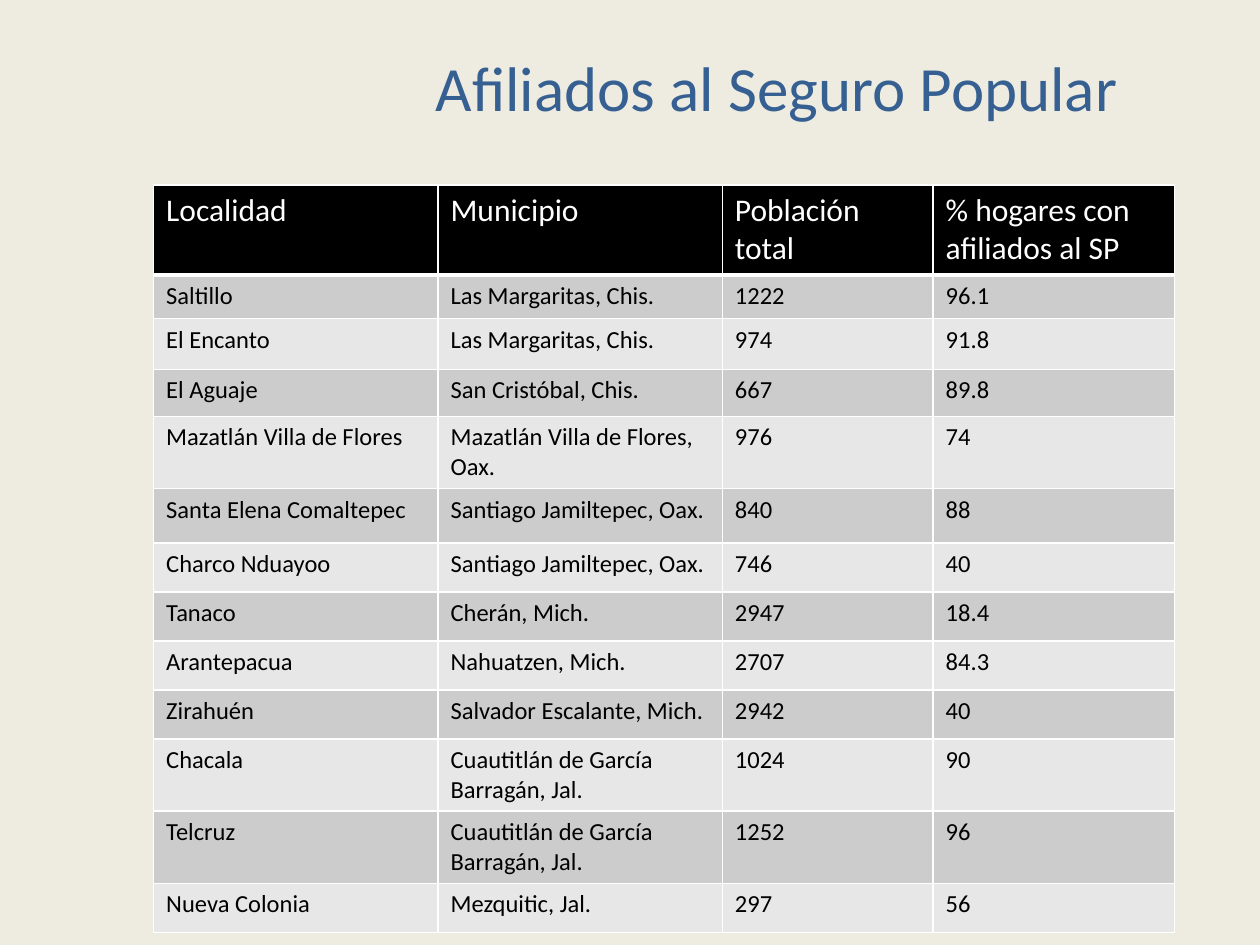
import dataclasses

import lxml.etree
import pptx
import pptx.dml.color
import pptx.enum.text
import pptx.oxml.ns
import pptx.util

Pt = pptx.util.Pt


@dataclasses.dataclass(frozen=True)
class Theme:
    font: str = "Calibri"
    background: str = "EEECE1"
    title: str = "376092"
    header_fill: str = "000000"
    header_text: str = "FFFFFF"
    body_text: str = "000000"
    bands: tuple = ("CCCCCC", "E7E7E7")
    border: str = "FFFFFF"
    title_size: int = 36
    header_size: int = 18
    body_size: int = 14


HEADER = ("Localidad", "Municipio", "Población total", "% hogares con afiliados al SP")
LOCALITIES = (
    ("Saltillo", "Las Margaritas, Chis.", "1222", "96.1"),
    ("El Encanto", "Las Margaritas, Chis.", "974", "91.8"),
    ("El Aguaje", "San Cristóbal, Chis.", "667", "89.8"),
    ("Mazatlán Villa de Flores", "Mazatlán Villa de Flores, Oax.", "976", "74"),
    ("Santa Elena Comaltepec", "Santiago Jamiltepec, Oax.", "840", "88"),
    ("Charco Nduayoo", "Santiago Jamiltepec, Oax.", "746", "40"),
    ("Tanaco", "Cherán, Mich.", "2947", "18.4"),
    ("Arantepacua", "Nahuatzen, Mich.", "2707", "84.3"),
    ("Zirahuén", "Salvador Escalante, Mich.", "2942", "40"),
    ("Chacala", "Cuautitlán de García Barragán, Jal.", "1024", "90"),
    ("Telcruz", "Cuautitlán de García Barragán, Jal.", "1252", "96"),
    ("Nueva Colonia", "Mezquitic, Jal.", "297", "56"),
)
COLUMN_WIDTHS = (162.5, 162.5, 120.5, 137.8)
ROW_HEIGHTS = (51.4, 24.9, 29, 26.8, 41.3, 31.2, 28, 28, 28, 28, 41.3, 41.3, 28)


def rgb(value):
    return pptx.dml.color.RGBColor.from_string(value)


class SlideBuilder:
    def __init__(self, theme, page):
        self.theme = theme
        self.page = page

    def background(self):
        fill = self.page.background.fill
        fill.solid()
        fill.fore_color.rgb = rgb(self.theme.background)

    def add_text(self, frame, text, size, color):
        para = frame.paragraphs[0]
        span = para.add_run()
        span.text = text
        span.font.color.rgb = rgb(color)
        for name, value in {"name": self.theme.font, "size": Pt(size), "bold": False}.items():
            setattr(span.font, name, value)
        return para

    def title(self, text, left, top, width, height):
        box = self.page.shapes.add_textbox(Pt(left), Pt(top), Pt(width), Pt(height))
        frame = box.text_frame
        layout = {"word_wrap": True, "vertical_anchor": pptx.enum.text.MSO_ANCHOR.MIDDLE}
        for name, value in layout.items():
            setattr(frame, name, value)
        para = self.add_text(frame, text, self.theme.title_size, self.theme.title)
        para.alignment = pptx.enum.text.PP_ALIGN.CENTER

    def borders(self, cell, bottom):
        properties = cell._tc.get_or_add_tcPr()
        for side, width in {"lnL": 1, "lnR": 1, "lnT": 1, "lnB": bottom}.items():
            line = lxml.etree.SubElement(
                properties, pptx.oxml.ns.qn(f"a:{side}"), w=str(Pt(width)))
            fill = lxml.etree.SubElement(line, pptx.oxml.ns.qn("a:solidFill"))
            lxml.etree.SubElement(fill, pptx.oxml.ns.qn("a:srgbClr"), val=self.theme.border)

    def cell(self, cell, text, size, color, fill, bottom):
        self.borders(cell, bottom)
        cell.fill.solid()
        cell.fill.fore_color.rgb = rgb(fill)
        self.add_text(cell.text_frame, text, size, color)

    def table(self, rows, left, top, widths, heights):
        """Draw a table whose first row is the header and whose other rows are banded."""
        theme = self.theme
        table = self.page.shapes.add_table(
            len(rows), len(widths), Pt(left), Pt(top), Pt(sum(widths)), Pt(sum(heights))).table
        for column, width in zip(table.columns, widths):
            column.width = Pt(width)
        for index, (row, height, texts) in enumerate(zip(table.rows, heights, rows)):
            row.height = Pt(height)
            if index == 0:
                style = (theme.header_size, theme.header_text, theme.header_fill, 3)
            else:
                style = (theme.body_size, theme.body_text, theme.bands[(index - 1) % 2], 1)
            for cell, text in zip(row.cells, texts):
                self.cell(cell, text, *style)


def main():
    deck = pptx.Presentation()
    deck.slide_width, deck.slide_height = Pt(720), Pt(540)
    builder = SlideBuilder(Theme(), deck.slides.add_slide(deck.slide_layouts[6]))
    builder.background()
    builder.title("Afiliados al Seguro Popular", 203.8, 21.6, 480, 56)
    builder.table((HEADER, *LOCALITIES), 87.8, 105.8, COLUMN_WIDTHS, ROW_HEIGHTS)
    deck.save("out.pptx")


if __name__ == "__main__":
    main()
